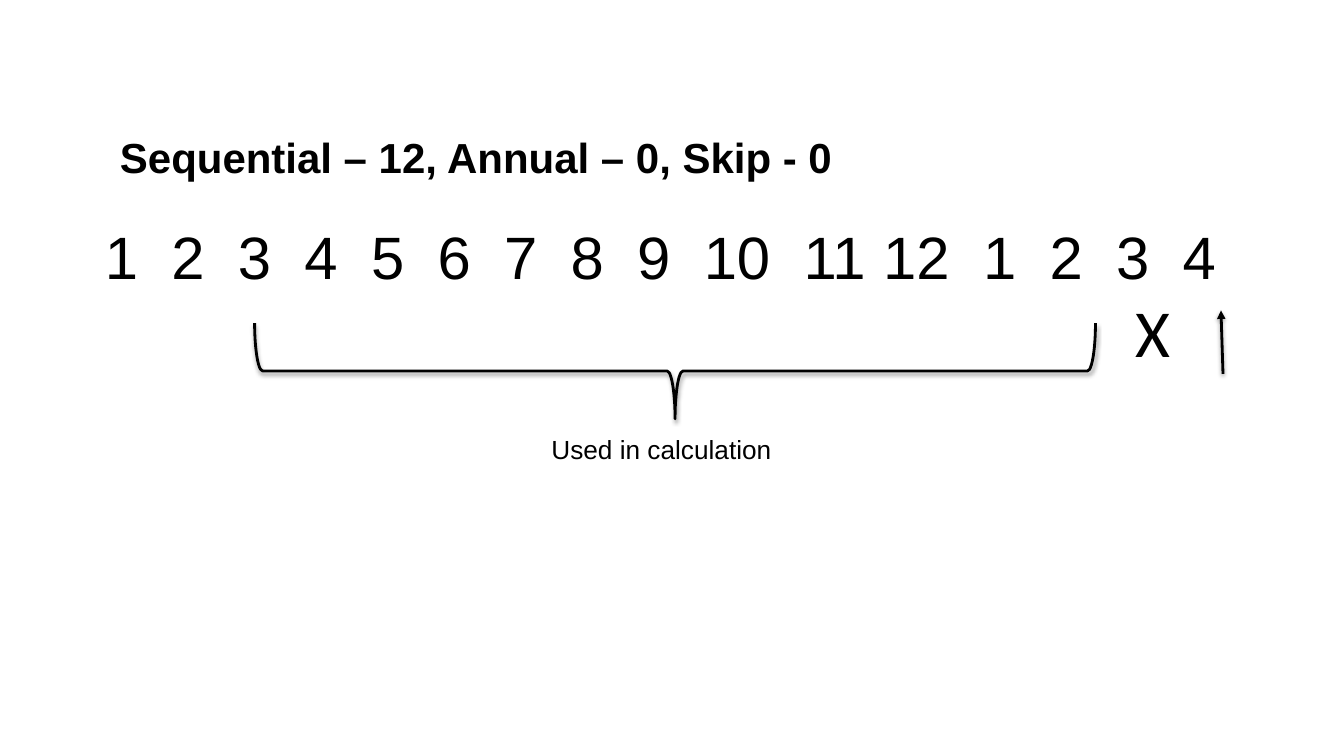
import pptx
import pptx.util
import pptx.dml.color
import pptx.enum.shapes
import pptx.enum.text
import pptx.oxml
import pptx.oxml.ns
from dataclasses import dataclass
from lxml import etree

Inches = pptx.util.Inches
Pt = pptx.util.Pt
qn = pptx.oxml.ns.qn


@dataclass
class Theme:
    ink = pptx.dml.color.RGBColor(0, 0, 0)
    font = "Arial"
    mark_font = "Calibri"
    title = 30
    months = 42.7
    mark = 48
    caption = 18.7
    stroke = 2


theme = Theme()


def write(s, text, size, font, insets, bold=False):
    tf = s.text_frame
    tf.text = text
    tf.margin_left, tf.margin_top, tf.margin_right, tf.margin_bottom = map(Inches, insets)
    p = tf.paragraphs[0]
    p.alignment = pptx.enum.text.PP_ALIGN.LEFT
    for r in p.runs:
        r.font.size = Pt(size)
        r.font.name = font
        r.font.bold = bold
        r.font.color.rgb = theme.ink
    return tf


def outline(s):
    s.line.color.rgb = theme.ink
    s.line.width = Pt(theme.stroke)
    sp_pr = s._element.spPr
    for old in sp_pr.findall(qn("a:effectLst")):
        sp_pr.remove(old)
    sp_pr.append(pptx.oxml.parse_xml(
        '<a:effectLst xmlns:a="http://schemas.openxmlformats.org/drawingml/2006/main">'
        f'<a:outerShdw blurRad="{Pt(3.1)}" dist="{Pt(1.6)}" dir="5400000" rotWithShape="0">'
        f'<a:srgbClr val="{theme.ink}"><a:alpha val="38000"/></a:srgbClr>'
        '</a:outerShdw></a:effectLst>'))


prs = pptx.Presentation()
prs.slide_width = Inches(13.33)
prs.slide_height = Inches(7.5)
slide = prs.slides.add_slide(prs.slide_layouts[5])
shapes = slide.shapes

title = shapes.title
title.left, title.top, title.width, title.height = map(Inches, (1.11, 0.93, 11.55, 1.25))
tf = write(title, "Sequential – 12, Annual – 0, Skip - 0", theme.title, theme.font,
           (0.08, 0.04, 0.08, 0.04), bold=True)
tf.vertical_anchor = pptx.enum.text.MSO_ANCHOR.MIDDLE

months = [str(m) for m in [*range(1, 13), *range(1, 5)]]
digit = 0.33
row = shapes.add_textbox(*map(Inches, (0.69, 2.09, 11.94, 0.89)))
tf = write(row, "\t".join(months), theme.months, theme.font, (0.35, 0.09, 0.08, 0.04))
tf.word_wrap = True
p_pr = tf.paragraphs[0]._p.get_or_add_pPr()
tabs = etree.SubElement(p_pr, qn("a:tabLst"))
stop = 0
for month in months[:-1]:
    gap = digit - 0.2 if month == "11" else digit
    stop += len(month) * digit + gap
    etree.SubElement(tabs, qn("a:tab"), pos=str(Inches(stop)), algn="l")

skipped = shapes.add_textbox(*map(Inches, (11, 2.84, 0.72, 0.97)))
tf = write(skipped, "X", theme.mark, theme.mark_font, (0.14, 0.13, 0, 0.13))
tf.word_wrap = True
tf.paragraphs[0].alignment = pptx.enum.text.PP_ALIGN.CENTER
tf.paragraphs[0].line_spacing = 0.9

arrow = shapes.add_connector(pptx.enum.shapes.MSO_CONNECTOR.STRAIGHT,
                             *map(Inches, (12.13, 3.71, 12.11, 3.08)))
outline(arrow)
etree.SubElement(arrow.line._get_or_add_ln(), qn("a:tailEnd"), type="triangle")

brace = shapes.add_shape(pptx.enum.shapes.MSO_SHAPE.RIGHT_BRACE,
                         *map(Inches, (6.22, -0.49, 0.95, 8.34)))
brace.rotation = 90
brace.fill.background()
outline(brace)

caption = shapes.add_textbox(*map(Inches, (5.37, 4.25, 2.71, 0.42)))
tf = write(caption, "Used in calculation", theme.caption, theme.font, (0.1, 0.05, 0.1, 0.05))
tf.word_wrap = True
tf.auto_size = pptx.enum.text.MSO_AUTO_SIZE.SHAPE_TO_FIT_TEXT

prs.save("out.pptx")
